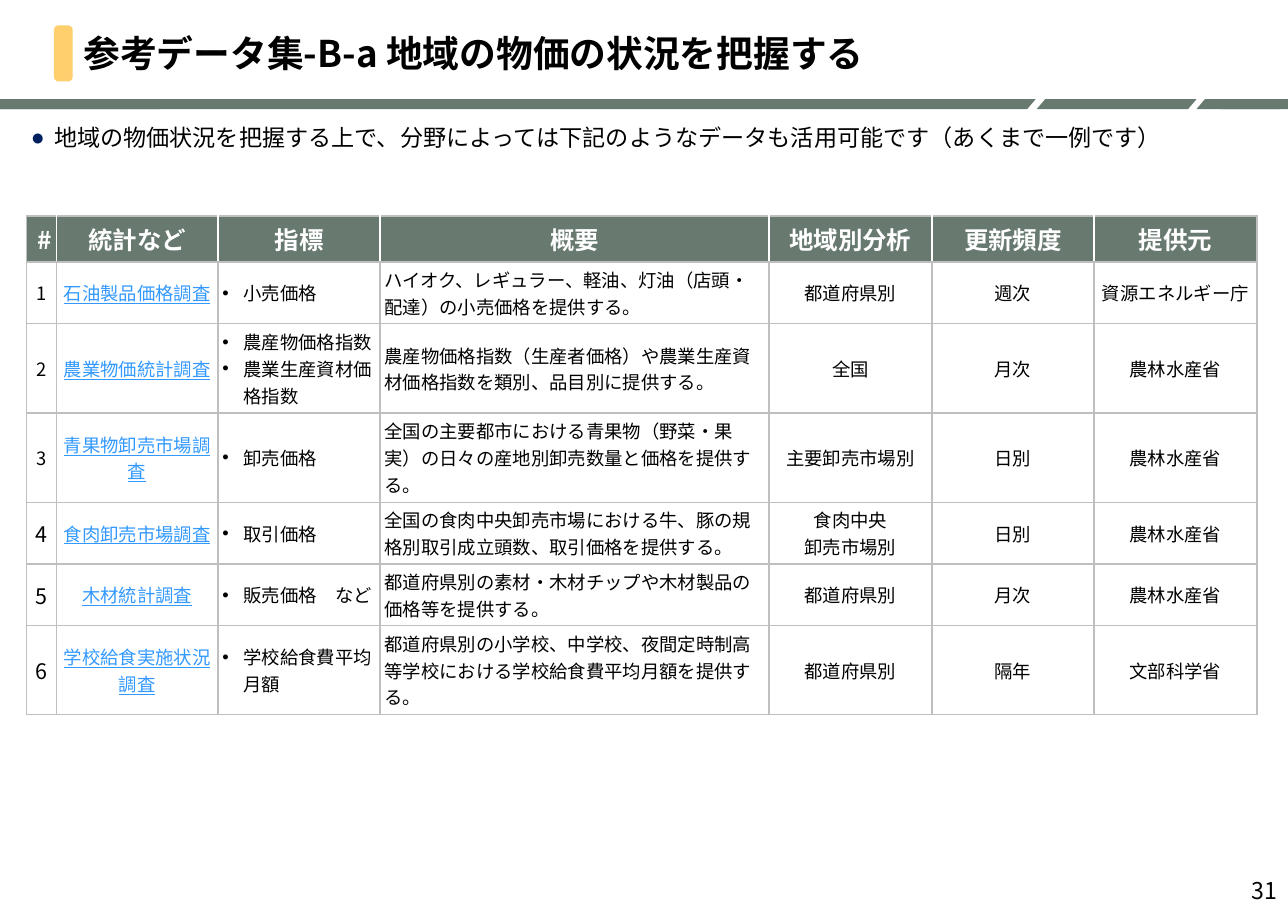
from dataclasses import dataclass
from typing import Any, Optional

from lxml import etree
from pptx import Presentation
from pptx.dml.color import RGBColor
from pptx.enum.shapes import MSO_SHAPE
from pptx.enum.text import MSO_ANCHOR, PP_ALIGN
from pptx.oxml.ns import qn
from pptx.util import Inches, Pt

LEFT, CENTER, RIGHT = PP_ALIGN.LEFT, PP_ALIGN.CENTER, PP_ALIGN.RIGHT
MIDDLE, TOP = MSO_ANCHOR.MIDDLE, MSO_ANCHOR.TOP
SLANTED, PLAIN = MSO_SHAPE.PARALLELOGRAM, MSO_SHAPE.RECTANGLE
ROUNDED = MSO_SHAPE.ROUNDED_RECTANGLE

FONT = "Noto Sans CJK JP"
BULLET_FONT = "Arial"
COLORS = {
    "green": "687A70",
    "yellow": "FFCE6D",
    "grid": "BFBFBF",
    "link": "3399FF",
    "navy": "002060",
    "black": "000000",
    "white": "FFFFFF",
}


@dataclass
class Block:
    kind: Any
    left: float
    top: float
    width: float
    height: float
    color: str
    adjust: Optional[float] = None


@dataclass
class Bullet:
    char: str
    indent: float
    color: Optional[str] = None


@dataclass
class Survey:
    name: str
    indicators: str
    summary: str
    area: str
    frequency: str
    provider: str
    lines: int


BLOCKS = [
    Block(SLANTED, 0, 0.9, 9.4, 0.09, "green", 0.85),
    Block(SLANTED, 9.41, 0.9, 1.45, 0.09, "green", 0.85),
    Block(SLANTED, 10.86, 0.9, 0.83, 0.09, "green", 0.85),
    Block(ROUNDED, 0.49, 0.23, 0.17, 0.51, "yellow", 0.25),
    Block(PLAIN, 0, 0.9, 1.45, 0.09, "green"),
    Block(PLAIN, 11.08, 0.9, 0.61, 0.09, "green"),
]

HEADERS = ["#", "統計など", "指標", "概要", "地域別分析", "更新頻度", "提供元"]
COLUMN_WIDTHS = [0.27, 1.47, 1.47, 3.53, 1.48, 1.47, 1.48]
HEADER_HEIGHT = 0.42
BODY_HEIGHTS = {2: 0.56, 3: 0.81}
DOT = Bullet("•", 0.19)
SURVEYS = [
    Survey("石油製品価格調査", "小売価格",
           "ハイオク、レギュラー、軽油、灯油（店頭・配達）の小売価格を提供する。",
           "都道府県別", "週次", "資源エネルギー庁", 2),
    Survey("農業物価統計調査", "農産物価格指数\n農業生産資材価格指数",
           "農産物価格指数（生産者価格）や農業生産資材価格指数を類別、品目別に提供する。",
           "全国", "月次", "農林水産省", 3),
    Survey("青果物卸売市場調査", "卸売価格",
           "全国の主要都市における青果物（野菜・果実）の日々の産地別卸売数量と価格を提供する。",
           "主要卸売市場別", "日別", "農林水産省", 3),
    Survey("食肉卸売市場調査", "取引価格",
           "全国の食肉中央卸売市場における牛、豚の規格別取引成立頭数、取引価格を提供する。",
           "食肉中央\n卸売市場別", "日別", "農林水産省", 2),
    Survey("木材統計調査", "販売価格　など",
           "都道府県別の素材・木材チップや木材製品の価格等を提供する。",
           "都道府県別", "月次", "農林水産省", 2),
    Survey("学校給食実施状況調査", "学校給食費平均月額",
           "都道府県別の小学校、中学校、夜間定時制高等学校における学校給食費平均月額を提供する。",
           "都道府県別", "隔年", "文部科学省", 3),
]


def rgb(name: str) -> RGBColor:
    return RGBColor.from_string(COLORS[name])


def add_bullet(p: Any, bullet: Bullet) -> None:
    pPr = p._p.get_or_add_pPr()
    pPr.set("marL", str(Inches(bullet.indent)))
    pPr.set("indent", str(-Inches(bullet.indent)))
    if bullet.color:
        clr = etree.SubElement(pPr, qn("a:buClr"))
        etree.SubElement(clr, qn("a:srgbClr"), val=COLORS[bullet.color])
    etree.SubElement(pPr, qn("a:buFont"), typeface=BULLET_FONT)
    etree.SubElement(pPr, qn("a:buChar"), char=bullet.char)


def write_text(tf: Any, text: str, *, size: float = 12, color: str = "black",
               bold: bool = False, underline: bool = False, align: Any = LEFT,
               bullet: Optional[Bullet] = None) -> None:
    for i, line in enumerate(text.split("\n")):
        p = tf.add_paragraph() if i else tf.paragraphs[0]
        p.alignment = align
        if bullet:
            add_bullet(p, bullet)
        r = p.add_run()
        r.text = line
        r.font.name = FONT
        r.font.size = Pt(size)
        r.font.bold = bold
        r.font.underline = underline
        r.font.color.rgb = rgb(color)
        latin = r._r.rPr.find(qn("a:latin"))
        latin.addnext(etree.Element(qn("a:ea"), typeface=FONT))


def add_block(s: Any, block: Block) -> None:
    sp = s.shapes.add_shape(block.kind, Inches(block.left), Inches(block.top),
                            Inches(block.width), Inches(block.height))
    sp.shadow.inherit = False
    sp.fill.solid()
    sp.fill.fore_color.rgb = rgb(block.color)
    sp.line.fill.background()
    if block.adjust is not None:
        sp.adjustments[0] = block.adjust


def add_label(s: Any, text: str, left: float, top: float, width: float,
              height: float, *, anchor: Any = MIDDLE, inset: float = 0.1,
              **style: Any) -> None:
    tf = s.shapes.add_textbox(Inches(left), Inches(top),
                              Inches(width), Inches(height)).text_frame
    tf.word_wrap = True
    tf.vertical_anchor = anchor
    tf.margin_left = tf.margin_right = Inches(inset)
    tf.margin_top = tf.margin_bottom = Inches(0.04)
    write_text(tf, text, **style)


def set_borders(cell: Any, left: str, right: str) -> None:
    tcPr = cell._tc.get_or_add_tcPr()
    for side, color in {"L": left, "R": right, "T": "grid", "B": "grid"}.items():
        ln = etree.SubElement(tcPr, qn(f"a:ln{side}"), w=str(Pt(1)))
        fill = etree.SubElement(ln, qn("a:solidFill"))
        etree.SubElement(fill, qn("a:srgbClr"), val=COLORS[color])


def fill_header(cell: Any, text: str, column: int) -> None:
    last = len(HEADERS) - 1
    set_borders(cell, "white" if column else "grid",
                "white" if column < last else "grid")
    cell.fill.solid()
    cell.fill.fore_color.rgb = rgb("green")
    write_text(cell.text_frame, text, size=16, color="white", bold=True, align=CENTER)


def fill_body(cell: Any, text: str, **style: Any) -> None:
    set_borders(cell, "grid", "grid")
    cell.fill.background()
    cell.vertical_anchor = MIDDLE
    cell.margin_left = cell.margin_right = Inches(0.04)
    cell.margin_top = cell.margin_bottom = Inches(0.04)
    write_text(cell.text_frame, text, **style)


def add_survey_table(s: Any) -> None:
    heights = [HEADER_HEIGHT] + [BODY_HEIGHTS[survey.lines] for survey in SURVEYS]
    table = s.shapes.add_table(len(heights), len(HEADERS), Inches(0.24), Inches(1.96),
                               Inches(sum(COLUMN_WIDTHS)), Inches(sum(heights))).table
    table.first_row = table.horz_banding = False
    for row, height in zip(table.rows, heights):
        row.height = Inches(height)
    for column, (header, width) in enumerate(zip(HEADERS, COLUMN_WIDTHS)):
        table.columns[column].width = Inches(width)
        fill_header(table.cell(0, column), header, column)
    for n, survey in enumerate(SURVEYS, 1):
        cells = table.rows[n].cells
        fill_body(cells[0], str(n), size=12 if n <= 3 else 14, align=CENTER)
        fill_body(cells[1], survey.name, color="link", underline=True, align=CENTER)
        fill_body(cells[2], survey.indicators, bullet=DOT)
        fill_body(cells[3], survey.summary)
        details = (survey.area, survey.frequency, survey.provider)
        for column, text in enumerate(details, 4):
            fill_body(cells[column], text, align=CENTER)


def main() -> None:
    prs = Presentation()
    prs.slide_width, prs.slide_height = Inches(11.69), Inches(8.27)
    s = prs.slides.add_slide(prs.slide_layouts[6])
    for block in BLOCKS:
        add_block(s, block)
    add_label(s, "31", 8.98, 7.89, 2.71, 0.38, size=15.1, align=RIGHT)
    add_label(s, "参考データ集-B-a 地域の物価の状況を把握する",
              0.66, 0.22, 10.75, 0.51, size=24, bold=True)
    add_survey_table(s)
    add_label(s, "地域の物価状況を把握する上で、分野によっては下記のようなデータも活用可能です（あくまで一例です）",
              0.24, 1.08, 11.22, 0.34, anchor=TOP, inset=0.04, size=15.1,
              bullet=Bullet("●", 0.21, "navy"))
    prs.save("out.pptx")


if __name__ == "__main__":
    main()
